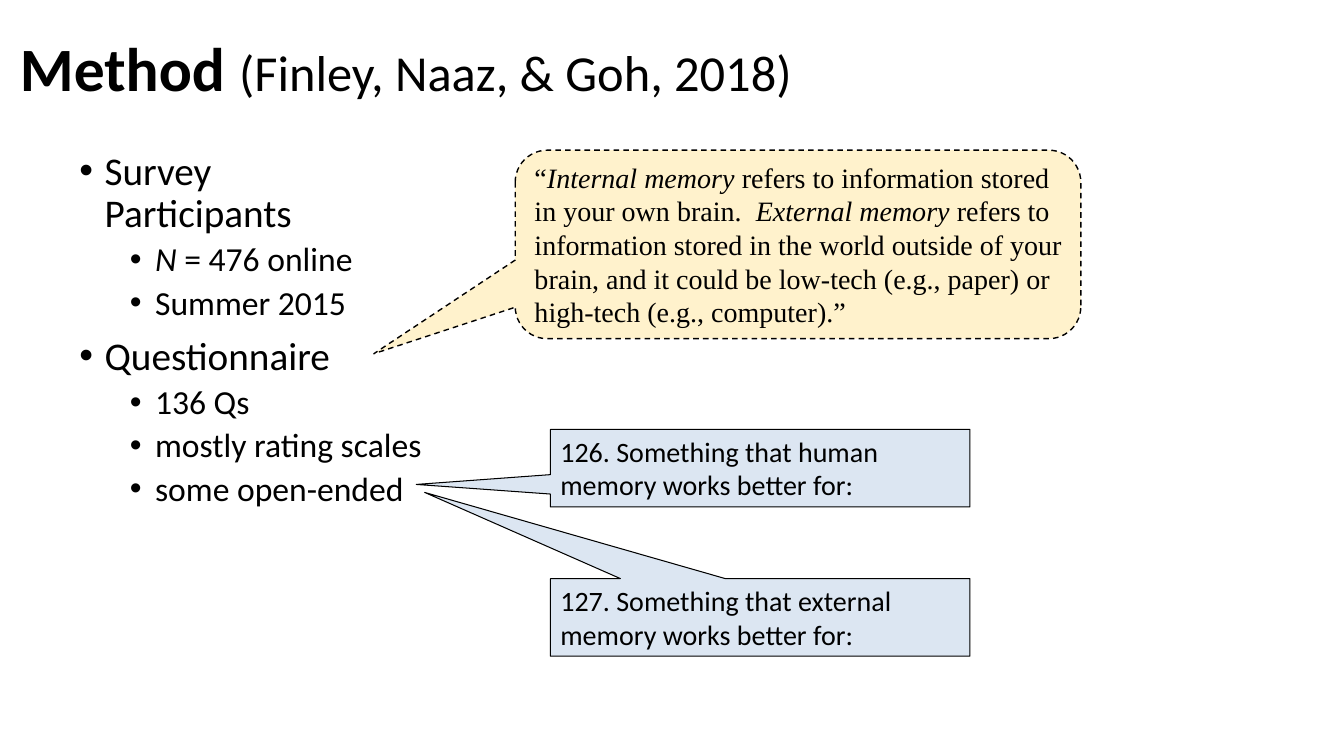
from lxml import etree
from pptx import Presentation
from pptx.dml.color import RGBColor
from pptx.enum.dml import MSO_LINE
from pptx.enum.shapes import MSO_SHAPE
from pptx.enum.text import MSO_ANCHOR, PP_ALIGN
from pptx.oxml.ns import qn
from pptx.util import Pt

PX = 9144  # 100 px to the inch
ROUND, RECT = MSO_SHAPE.ROUNDED_RECTANGULAR_CALLOUT, MSO_SHAPE.RECTANGULAR_CALLOUT
TOP, MIDDLE = MSO_ANCHOR.TOP, MSO_ANCHOR.MIDDLE
LEFT, DASH = PP_ALIGN.LEFT, MSO_LINE.DASH
BLACK, CREAM, PALE_BLUE = "000000", "FFF2CC", "DCE6F2"

TITLE = [("Method ", {"bold": True, "size": Pt(44)}),
         ("(Finley, Naaz, & Goh, 2018)", {"size": Pt(36)})]
ITALIC = {"italic": True}
OUTLINE = [
    (0, [("Survey\nParticipants", {})]),
    (1, [("N", ITALIC), (" = 476 online", {})]),
    (1, [("Summer 2015", {})]),
    (0, [("Questionnaire", {})]),
    (1, [("136 Qs", {})]),
    (1, [("mostly rating scales", {})]),
    (1, [("some open-ended", {})]),
]
LEVELS = [{"size": 28, "before": 10, "indent": 25}, {"size": 24, "before": 5, "indent": 75}]
DEFINITION = [
    ("“", {}),
    ("Internal memory ", ITALIC),
    ("refers to information stored in your own brain.  ", {}),
    ("External memory ", ITALIC),
    ("refers to information stored in the world outside of your brain, and it could be "
     "low-tech (e.g., paper) or high-tech (e.g., computer).”", {}),
]
QUESTIONS = [
    ("126. Something that human memory works better for:", (-0.82, 0.21)),
    ("127. Something that external memory works better for:", (-0.8, -1.61)),
]


def rgb(color):
    return RGBColor.from_string(color)


def emu(box):
    return [v * PX for v in box]


def set_attrs(obj, values):
    for name, value in values.items():
        setattr(obj, name, value)


def add_runs(p, runs, size, font="Calibri"):
    p.alignment = LEFT
    for text, values in runs:
        for i, line in enumerate(text.split("\n")):
            if i:
                p.add_line_break()
            r = p.add_run()
            r.text = line
            set_attrs(r.font, {"name": font, "size": Pt(size), **values})
            r.font.color.rgb = rgb(BLACK)


def add_bullet(p, indent):
    pPr = p._p.get_or_add_pPr()
    pPr.set("marL", str(indent * PX))
    pPr.set("indent", str(-25 * PX))
    etree.SubElement(pPr, qn("a:buFont")).set("typeface", "Arial")
    etree.SubElement(pPr, qn("a:buChar")).set("char", "•")


def add_textbox(s, box, anchor):
    tf = s.shapes.add_textbox(*emu(box)).text_frame
    set_attrs(tf, {"word_wrap": True, "vertical_anchor": anchor})
    return tf


def add_title(s, box):
    p = add_textbox(s, box, MIDDLE).paragraphs[0]
    p.line_spacing = 0.9
    add_runs(p, TITLE, 44)


def add_outline(s, box):
    tf = add_textbox(s, box, TOP)
    for i, (level, runs) in enumerate(OUTLINE):
        p = tf.add_paragraph() if i else tf.paragraphs[0]
        style = LEVELS[level]
        set_attrs(p, {"level": level, "line_spacing": 0.9, "space_before": Pt(style["before"])})
        add_bullet(p, style["indent"])
        add_runs(p, runs, style["size"])


def add_callout(s, kind, box, tail, fill, width, runs, anchor=TOP, font="Calibri"):
    sp = s.shapes.add_shape(kind, *emu(box))
    sp.shadow.inherit = False
    for i, value in enumerate(tail):
        sp.adjustments[i] = value
    sp.fill.solid()
    sp.fill.fore_color.rgb = rgb(fill)
    sp.line.color.rgb = rgb(BLACK)
    sp.line.width = Pt(width)
    tf = sp.text_frame
    set_attrs(tf, {"word_wrap": True, "vertical_anchor": anchor})
    add_runs(tf.paragraphs[0], runs, 20, font)
    return sp


def add_definition(s, box):
    sp = add_callout(s, ROUND, box, (-0.75, 0.58, 0.17), CREAM, 1,
                     DEFINITION, MIDDLE, "Times New Roman")
    sp.line.dash_style = DASH
    sp.text_frame.margin_right = 6 * PX


def add_questions(s, box, step):
    left, top, width, height = box
    for i, (text, tail) in enumerate(QUESTIONS):
        add_callout(s, RECT, (left, top + i * step, width, height), tail,
                    PALE_BLUE, 0.75, [(text, {})])


def main():
    prs = Presentation()
    prs.slide_width, prs.slide_height = emu((1333, 750))
    s = prs.slides.add_slide(prs.slide_layouts[6])
    add_title(s, (10, 8, 900, 125))
    add_outline(s, (69, 145, 900, 551))
    add_definition(s, (511, 149, 561, 187))
    add_questions(s, (546, 426, 416, 77), 148)
    prs.save("out.pptx")


if __name__ == "__main__":
    main()
